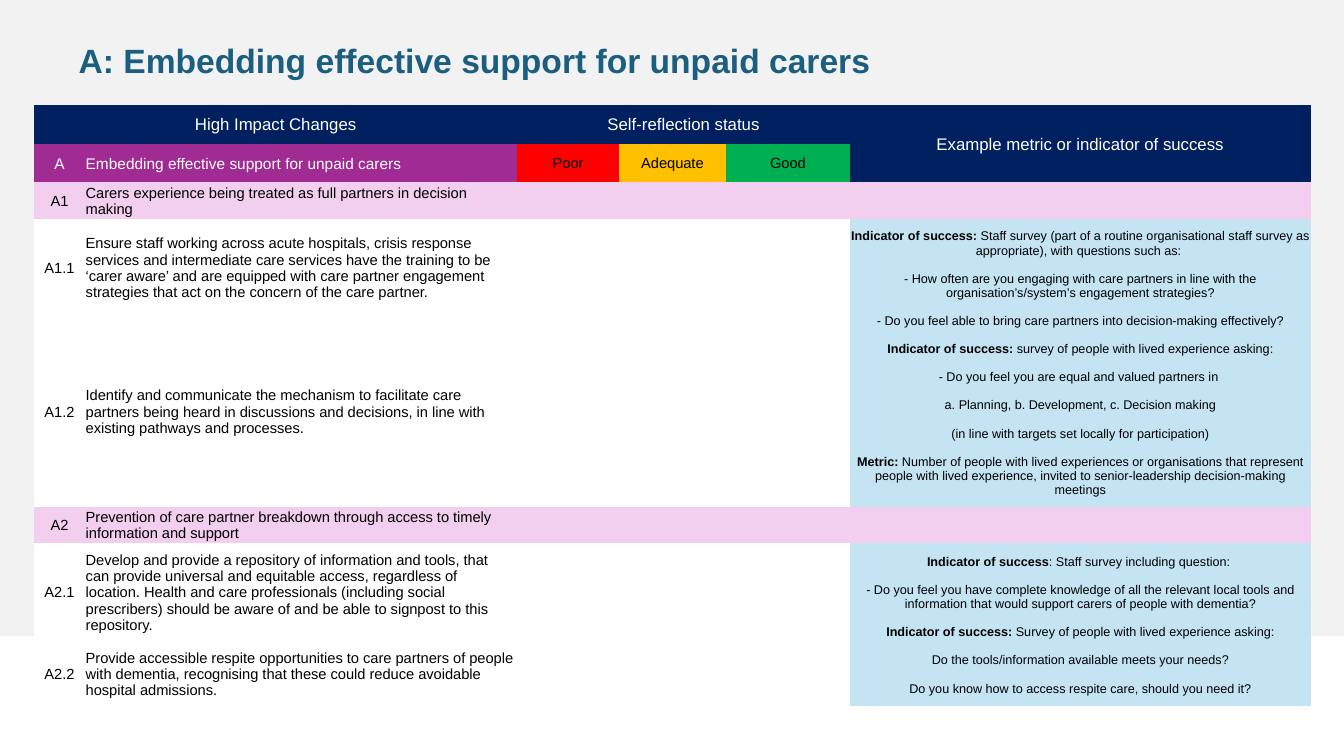
from pptx import Presentation
from pptx.dml.color import RGBColor
from pptx.enum.shapes import MSO_SHAPE
from pptx.enum.text import MSO_ANCHOR, PP_ALIGN
from pptx.util import Inches, Pt

LEFT, CENTER = PP_ALIGN.LEFT, PP_ALIGN.CENTER
TOP, MIDDLE = MSO_ANCHOR.TOP, MSO_ANCHOR.MIDDLE
RECTANGLE = MSO_SHAPE.RECTANGLE

WHITE = RGBColor(0xFF, 0xFF, 0xFF)
BLACK = RGBColor(0x00, 0x00, 0x00)
GREY = RGBColor(0xF2, 0xF2, 0xF2)
TEAL = RGBColor(0x1B, 0x5E, 0x7F)
NAVY = RGBColor(0x00, 0x20, 0x60)
PURPLE = RGBColor(0xA0, 0x2B, 0x93)
PINK = RGBColor(0xF2, 0xCE, 0xEF)
BLUE = RGBColor(0xC4, 0xE3, 0xF3)
RED = RGBColor(0xFF, 0x00, 0x00)
AMBER = RGBColor(0xFF, 0xC0, 0x00)
GREEN = RGBColor(0x00, 0xB0, 0x50)

FONT = "Arial"
NO_STYLE = "{2D5ABB26-0587-4C30-8999-92F81FD0307C}"

# Content
TITLE = "A: Embedding effective support for unpaid carers"
COLS = [0.5, 4.29, 1.01, 1.06, 1.23, 4.57]
ROWS = [0.39, 0.38, 0.36, 0.97, 1.89, 0.36, 0.97, 0.65]

# (first column, last column, last row, text)
HEADERS = [
    (0, 1, 0, "High Impact Changes"),
    (2, 4, 0, "Self-reflection status"),
    (5, 5, 1, "Example metric or indicator of success"),
]
SECTION = ("A", "Embedding effective support for unpaid carers")
RATINGS = [("Poor", RED), ("Adequate", AMBER), ("Good", GREEN)]

# (code, text, fill)
CHANGES = [
    ("A1", "Carers experience being treated as full partners in decision making", PINK),
    ("A1.1", "Ensure staff working across acute hospitals, crisis response services and "
     "intermediate care services have the training to be ‘carer aware’ and are equipped "
     "with care partner engagement strategies that act on the concern of the care partner.",
     WHITE),
    ("A1.2", "Identify and communicate the mechanism to facilitate care partners being heard "
     "in discussions and decisions, in line with existing pathways and processes.", WHITE),
    ("A2", "Prevention of care partner breakdown through access to timely information "
     "and support", PINK),
    ("A2.1", "Develop and provide a repository of information and tools, that can provide "
     "universal and equitable access, regardless of location. Health and care professionals "
     "(including social prescribers) should be aware of and be able to signpost to this "
     "repository.", WHITE),
    ("A2.2", "Provide accessible respite opportunities to care partners of people with "
     "dementia, recognising that these could reduce avoidable hospital admissions.", WHITE),
]

# First table row -> paragraphs of (bold lead, text); each spans two rows
INDICATORS = {
    3: [
        ("Indicator of success: ", "Staff survey (part of a routine organisational staff "
         "survey as appropriate), with questions such as: "),
        ("", "- How often are you engaging with care partners in line with the "
         "organisation’s/system’s engagement strategies?"),
        ("", "- Do you feel able to bring care partners into decision-making effectively?"),
        ("Indicator of success: ", "survey of people with lived experience asking:"),
        ("", "- Do you feel you are equal and valued partners in "),
        ("", "a. Planning, b. Development, c. Decision making"),
        ("", "(in line with targets set locally for participation)"),
        ("Metric: ", "Number of people with lived experiences or organisations that represent "
         "people with lived experience, invited to senior-leadership decision-making meetings"),
    ],
    6: [
        ("Indicator of success", ": Staff survey including question: "),
        ("", "- Do you feel you have complete knowledge of all the relevant local tools and "
         "information that would support carers of people with dementia?"),
        ("Indicator of success: ", "Survey of people with lived experience asking:"),
        ("", "Do the tools/information available meets your needs?"),
        ("", "Do you know how to access respite care, should you need it?"),
    ],
}


def paint(cell, color):
    cell.fill.solid()
    cell.fill.fore_color.rgb = color
    cell.vertical_anchor = MIDDLE
    cell.margin_left = cell.margin_right = cell.margin_top = Inches(0.01)
    cell.margin_bottom = 0


def style(p, size, color, align):
    p.alignment = align
    p.font.name, p.font.size, p.font.color.rgb = FONT, Pt(size), color


def write(cell, text, fill, size=10.5, color=BLACK, align=CENTER):
    paint(cell, fill)
    p = cell.text_frame.paragraphs[0]
    p.text = text
    style(p, size, color, align)


prs = Presentation()
prs.slide_width, prs.slide_height = Inches(13.33), Inches(7.5)
s = prs.slides.add_slide(prs.slide_layouts[5])

# Grey backdrop, behind everything
backdrop = s.shapes.add_shape(RECTANGLE, 0, 0, prs.slide_width, Inches(6.31))
backdrop.shadow.inherit = False
backdrop.fill.solid()
backdrop.fill.fore_color.rgb = GREY
backdrop.line.fill.background()
s.shapes._spTree.insert(2, backdrop._element)

# Title
title = s.shapes.title
title.left, title.top = Inches(0.68), Inches(0.3)
title.width, title.height = Inches(11.97), Inches(0.51)
tf = title.text_frame
tf.text = TITLE
tf.vertical_anchor = TOP
p = tf.paragraphs[0]
style(p, 24, TEAL, LEFT)
p.font.bold = True
p.line_spacing = Pt(32)

# Table grid
frame = s.shapes.add_table(len(ROWS), len(COLS), Inches(0.34), Inches(1.04),
                           Inches(sum(COLS)), Inches(sum(ROWS)))
table = frame.table
table.first_row = table.horz_banding = False
table._tbl.tblPr.find("{*}tableStyleId").text = NO_STYLE
for column, width in zip(table.columns, COLS):
    column.width = Inches(width)
for row, height in zip(table.rows, ROWS):
    row.height = Inches(height)

# Header rows
for first, last, bottom, text in HEADERS:
    cell = table.cell(0, first)
    if (first, 0) != (last, bottom):
        cell.merge(table.cell(bottom, last))
    write(cell, text, NAVY, 12, WHITE)
for c, (text, align) in enumerate(zip(SECTION, (CENTER, LEFT))):
    write(table.cell(1, c), text, PURPLE, 11, WHITE, align)
for c, (text, color) in enumerate(RATINGS, 2):
    write(table.cell(1, c), text, color)

# High impact changes
for r, (code, text, fill) in enumerate(CHANGES, 2):
    for c in range(len(COLS)):
        paint(table.cell(r, c), fill)
    write(table.cell(r, 0), code, fill)
    write(table.cell(r, 1), text, fill, align=LEFT)

# Indicators of success
for top, lines in INDICATORS.items():
    cell = table.cell(top, 5)
    cell.merge(table.cell(top + 1, 5))
    paint(cell, BLUE)
    tf = cell.text_frame
    for i, (lead, text) in enumerate(lines):
        p = tf.add_paragraph() if i else tf.paragraphs[0]
        style(p, 9, BLACK, CENTER)
        p.space_before = Pt(10 if i else 0)
        if lead:
            run = p.add_run()
            run.text = lead
            run.font.bold = True
        p.add_run().text = text

prs.save("out.pptx")
